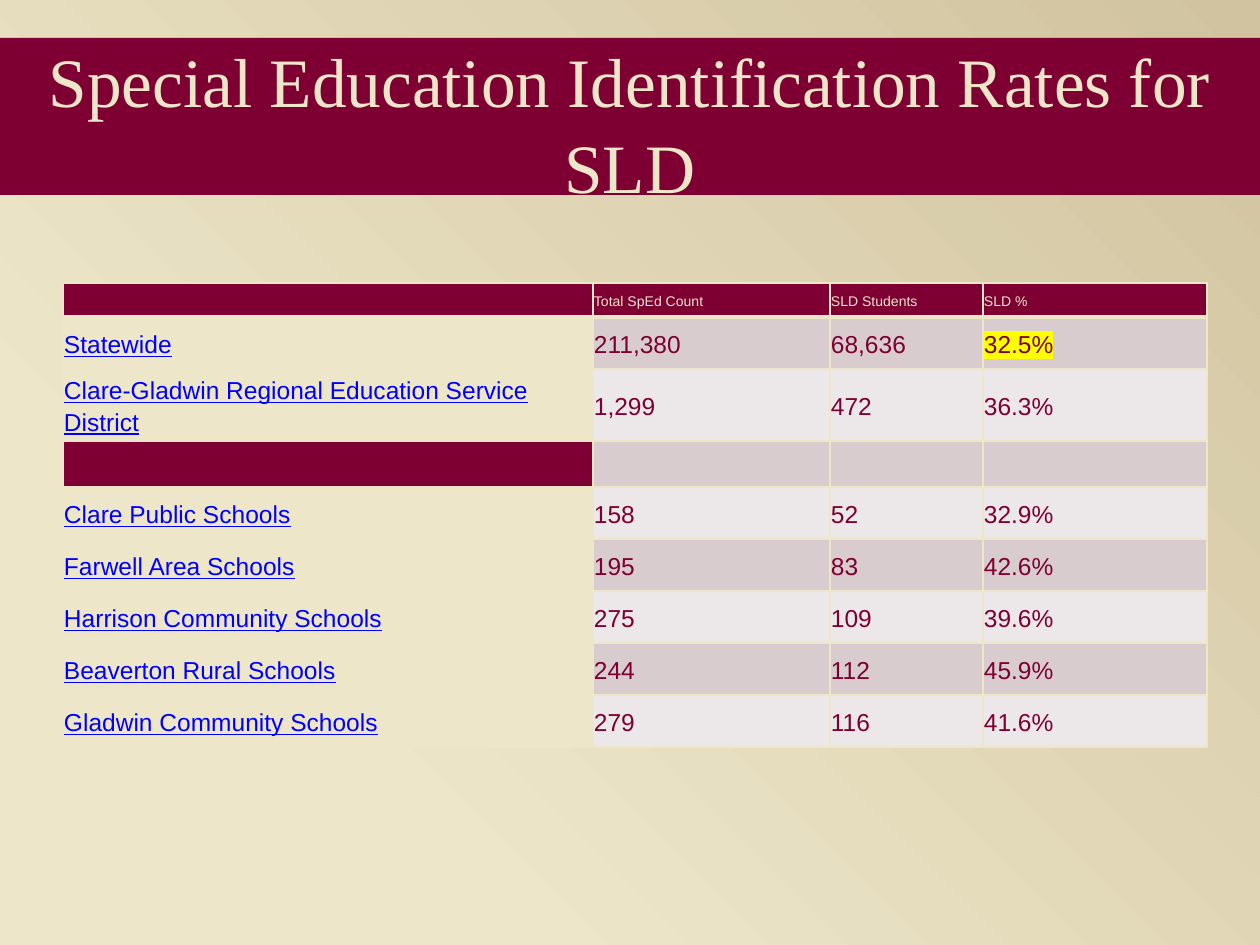
from lxml.etree import SubElement
from pptx import Presentation
from pptx.dml.color import RGBColor
from pptx.enum.shapes import MSO_SHAPE
from pptx.enum.text import MSO_ANCHOR, PP_ALIGN
from pptx.oxml.ns import qn
from pptx.util import Pt

PX = 914400 // 126
WINE, CREAM, LINK, YELLOW = "7E0032", "EDE6C9", "0000FF", "FFFF00"
BANDS = ["ECE7E8", "D8CCCE"]


def color(value):
    return RGBColor.from_string(value)


def write(frame, text, size, fill, font="Arial", align=PP_ALIGN.LEFT,
          spacing=1.15, underline=None, highlight=None):
    paragraph = frame.paragraphs[0]
    paragraph.alignment = align
    paragraph.line_spacing = spacing
    if not text:
        SubElement(paragraph._p, qn("a:endParaRPr"), sz=str(size * 100))
        return
    run = paragraph.add_run()
    run.text = text
    run.font.size = Pt(size)
    run.font.color.rgb = color(fill)
    if highlight:
        mark = SubElement(run.font._element, qn("a:highlight"))
        SubElement(mark, qn("a:srgbClr"), val=highlight)
    run.font.underline = underline
    run.font.name = font


prs = Presentation()
prs.slide_width, prs.slide_height = 1260 * PX, 945 * PX
slide = prs.slides.add_slide(prs.slide_layouts[6])

# Background: light at lower left, darker at upper right
backdrop = slide.background.fill
backdrop.gradient()
backdrop.gradient_angle = 45
for stop, (position, shade) in zip(backdrop.gradient_stops,
                                   [(0.24, CREAM), (1, "D1C39F")]):
    stop.position = position
    stop.color.rgb = color(shade)

# Title band
title = slide.shapes.add_shape(MSO_SHAPE.RECTANGLE, 0, 38 * PX, 1260 * PX, 157 * PX)
title.shadow.inherit = False
title.fill.solid()
title.fill.fore_color.rgb = color(WINE)
title.line.fill.background()
heading = title.text_frame
heading.word_wrap = True
heading.vertical_anchor = MSO_ANCHOR.MIDDLE
heading.margin_top, heading.margin_bottom = 9 * PX, 0
write(heading, "Special Education Identification Rates for SLD", 39.6, CREAM,
      font="Times New Roman", align=PP_ALIGN.CENTER, spacing=1.04)

# Identification rates
rates = [
    ("", "Total SpEd Count", "SLD Students", "SLD %"),
    ("Statewide", "211,380", "68,636", "32.5%"),
    ("Clare-Gladwin Regional Education Service District", "1,299", "472", "36.3%"),
    ("", "", "", ""),
    ("Clare Public Schools", "158", "52", "32.9%"),
    ("Farwell Area Schools", "195", "83", "42.6%"),
    ("Harrison Community Schools", "275", "109", "39.6%"),
    ("Beaverton Rural Schools", "244", "112", "45.9%"),
    ("Gladwin Community Schools", "279", "116", "41.6%"),
]
widths = [530, 237, 153, 224]
heights = [34, 52, 72, 46] + [52] * 5
table = slide.shapes.add_table(len(rates), len(widths), 63 * PX, 283 * PX,
                               sum(widths) * PX, sum(heights) * PX).table
table.first_row = table.horz_banding = False
for column, width in zip(table.columns, widths):
    column.width = width * PX

for r, (values, height) in enumerate(zip(rates, heights)):
    table.rows[r].height = height * PX
    for c, value in enumerate(values):
        cell = table.cell(r, c)
        cell.vertical_anchor = MSO_ANCHOR.MIDDLE
        cell.margin_left = cell.margin_right = PX
        cell.margin_top = cell.margin_bottom = PX

        # Borders, heavier below the header
        for side in ("L", "R", "T", "B"):
            heavy = (r == 0 and side == "B") or (r == 1 and side == "T")
            border = SubElement(cell._tc.get_or_add_tcPr(), qn(f"a:ln{side}"),
                                w=str(Pt(3 if heavy else 1)))
            SubElement(SubElement(border, qn("a:solidFill")),
                       qn("a:srgbClr"), val=CREAM)

        # Header and divider are wine, names cream, figures banded
        is_name = c == 0
        cell.fill.solid()
        if r == 0 or (is_name and not value):
            shade = WINE
        else:
            shade = CREAM if is_name else BANDS[r % 2]
        cell.fill.fore_color.rgb = color(shade)

        if r == 0:
            write(cell.text_frame, value, 8, CREAM)
        else:
            write(cell.text_frame, value, 14, LINK if is_name else WINE,
                  underline=True if is_name else None,
                  highlight=YELLOW if value == "32.5%" else None)

prs.save("out.pptx")
